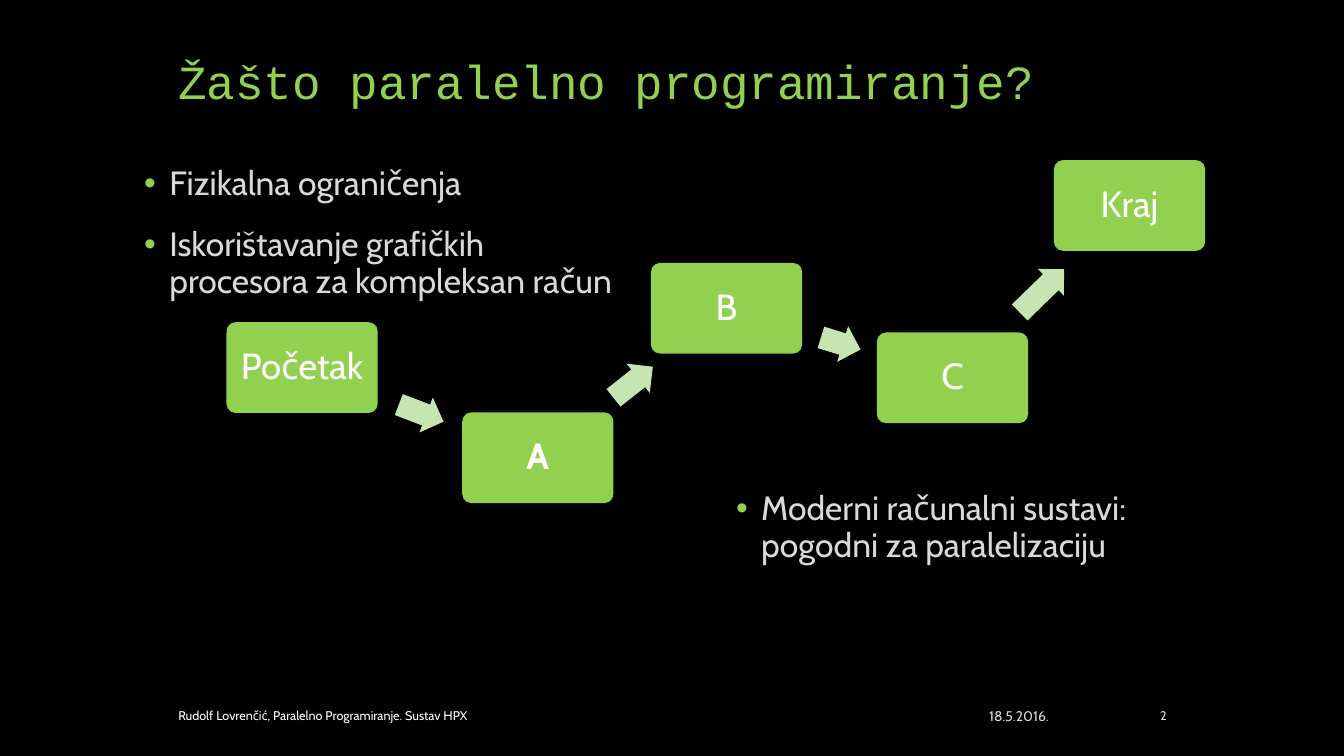
from itertools import pairwise
from math import atan2, degrees, hypot

from lxml.etree import SubElement
from pptx import Presentation
from pptx.dml.color import RGBColor
from pptx.enum.shapes import MSO_SHAPE as Shape
from pptx.enum.text import MSO_ANCHOR as Anchor, MSO_AUTO_SIZE as AutoSize, PP_ALIGN as Align
from pptx.oxml.ns import qn
from pptx.util import Inches, Pt

COLORS = {
    "background": "000000",
    "accent": "92D050",
    "arrow": "C7E4B3",
    "body": "D9D9D9",
    "white": "FFFFFF",
}
SLIDE_W, SLIDE_H = 13.33, 7.5
BODY_FONT, TITLE_FONT = "Cabin", "Courier New"

STEP_W, STEP_H = 1.5, 0.9
# Label and centre of each step, as shares of the diagram box
STEPS = [
    ("Početak", 0.077, 0.605),
    ("A", 0.318, 0.868),
    ("B", 0.511, 0.432),
    ("C", 0.742, 0.635),
    ("Kraj", 0.923, 0.132),
]


def color(name):
    return RGBColor.from_string(COLORS[name])


def place(sp, box):
    sp.left, sp.top, sp.width, sp.height = map(Inches, box)


def style(p, size, color_name, font=BODY_FONT, align=Align.LEFT, bold=False):
    p.alignment = align
    for r in p.runs:
        r.font.name, r.font.size, r.font.bold = font, Pt(size), bold
        r.font.color.rgb = color(color_name)


def add_title(slide, box, text):
    title = slide.shapes.title
    place(title, box)
    tf = title.text_frame
    tf.text = text
    tf.auto_size = AutoSize.NONE
    tf.vertical_anchor = Anchor.BOTTOM
    tf.paragraphs[0].line_spacing = 0.9
    style(tf.paragraphs[0], 34, "accent", TITLE_FONT)


def add_bullets(sp, box, lines):
    place(sp, box)
    tf = sp.text_frame
    tf.text = "\n".join(lines)
    tf.auto_size = AutoSize.NONE
    tf.vertical_anchor = Anchor.TOP
    for p in tf.paragraphs:
        p.line_spacing = 0.9
        p.space_before, p.space_after = Pt(18), Pt(0)
        style(p, 24, "body")
        pPr = p._p.get_or_add_pPr()
        pPr.set("marL", str(Inches(0.25)))
        pPr.set("indent", str(Inches(-0.25)))
        bullet_color = SubElement(pPr, qn("a:buClr"))
        SubElement(bullet_color, qn("a:srgbClr"), val=COLORS["accent"])
        SubElement(pPr, qn("a:buFont"), typeface="Arial")
        SubElement(pPr, qn("a:buChar"), char="•")


def add_plain_shape(slide, kind, cx, cy, w, h, fill):
    sp = slide.shapes.add_shape(kind, 0, 0, 0, 0)
    place(sp, (cx - w / 2, cy - h / 2, w, h))
    sp.shadow.inherit = False
    sp.fill.solid()
    sp.fill.fore_color.rgb = color(fill)
    sp.line.fill.background()
    return sp


def add_step(slide, label, cx, cy):
    sp = add_plain_shape(slide, Shape.ROUNDED_RECTANGLE, cx, cy, STEP_W, STEP_H, "accent")
    sp.adjustments[0] = 0.1
    tf = sp.text_frame
    tf.text = label
    tf.word_wrap = True
    tf.vertical_anchor = Anchor.MIDDLE
    tf.margin_left = tf.margin_right = Inches(0.1)
    tf.paragraphs[0].line_spacing = 0.9
    style(tf.paragraphs[0], 26, "white", align=Align.CENTER, bold=label == "A")


def add_arrow(slide, start, end):
    (x1, y1), (x2, y2) = start, end
    dx, dy = x2 - x1, y2 - y1
    # Share of the centre line that lies inside each step
    inside = min(STEP_W / 2 / abs(dx), STEP_H / 2 / abs(dy))
    length = 0.53 * (1 - 2 * inside) * hypot(dx, dy)
    sp = add_plain_shape(slide, Shape.RIGHT_ARROW, x1 + dx * 0.505, y1 + dy * 0.505,
                         length, 0.37, "arrow")
    sp.adjustments[0], sp.adjustments[1] = 0.6, 0.5
    sp.rotation = degrees(atan2(dy, dx))


def add_process(slide, box):
    left, top, width, height = box
    centres = [(left + x * width, top + y * height) for _, x, y in STEPS]
    for (label, _, _), centre in zip(STEPS, centres):
        add_step(slide, label, *centre)
    for start, end in pairwise(centres):
        add_arrow(slide, start, end)


def add_footer(slide, box):
    left, top, width, height = box
    # Text, left and width as shares of the footer, size, colour, alignment
    parts = [
        ("Rudolf Lovrenčić, Paralelno Programiranje. Sustav HPX", 0, 0.75, 9, "white", Align.LEFT),
        ("18.5.2016.", 0.775, 0.108, 10, "body", Align.RIGHT),
        ("2", 0.908, 0.092, 9, "body", Align.RIGHT),
    ]
    for text, x, w, size, color_name, align in parts:
        sp = slide.shapes.add_textbox(0, 0, 0, 0)
        place(sp, (left + x * width, top, w * width, height))
        tf = sp.text_frame
        tf.text = text
        tf.word_wrap = True
        tf.vertical_anchor = Anchor.MIDDLE
        style(tf.paragraphs[0], size, color_name, align=align)


def build_process_slide(prs):
    slide = prs.slides.add_slide(prs.slide_layouts.get_by_name("Two Content"))
    slide.background.fill.solid()
    slide.background.fill.fore_color.rgb = color("background")
    _, reasons, systems = slide.placeholders

    add_title(slide, (1.67, 0.39, 10, 0.75), "Žašto paralelno programiranje?")
    add_bullets(reasons, (1.33, 1.6, 4.92, 2.32), [
        "Fizikalna ograničenja",
        "Iskorištavanje grafičkih procesora za kompleksan račun",
    ])
    add_bullets(systems, (7.2, 4.83, 5.05, 1.28), [
        "Moderni računalni sustavi: pogodni za paralelizaciju",
    ])
    add_process(slide, (2.25, 1.59, 9.7, 3.4))
    add_footer(slide, (1.67, 6.96, 10, 0.28))


def main():
    prs = Presentation()
    prs.slide_width, prs.slide_height = Inches(SLIDE_W), Inches(SLIDE_H)
    build_process_slide(prs)
    prs.save("out.pptx")


if __name__ == "__main__":
    main()
